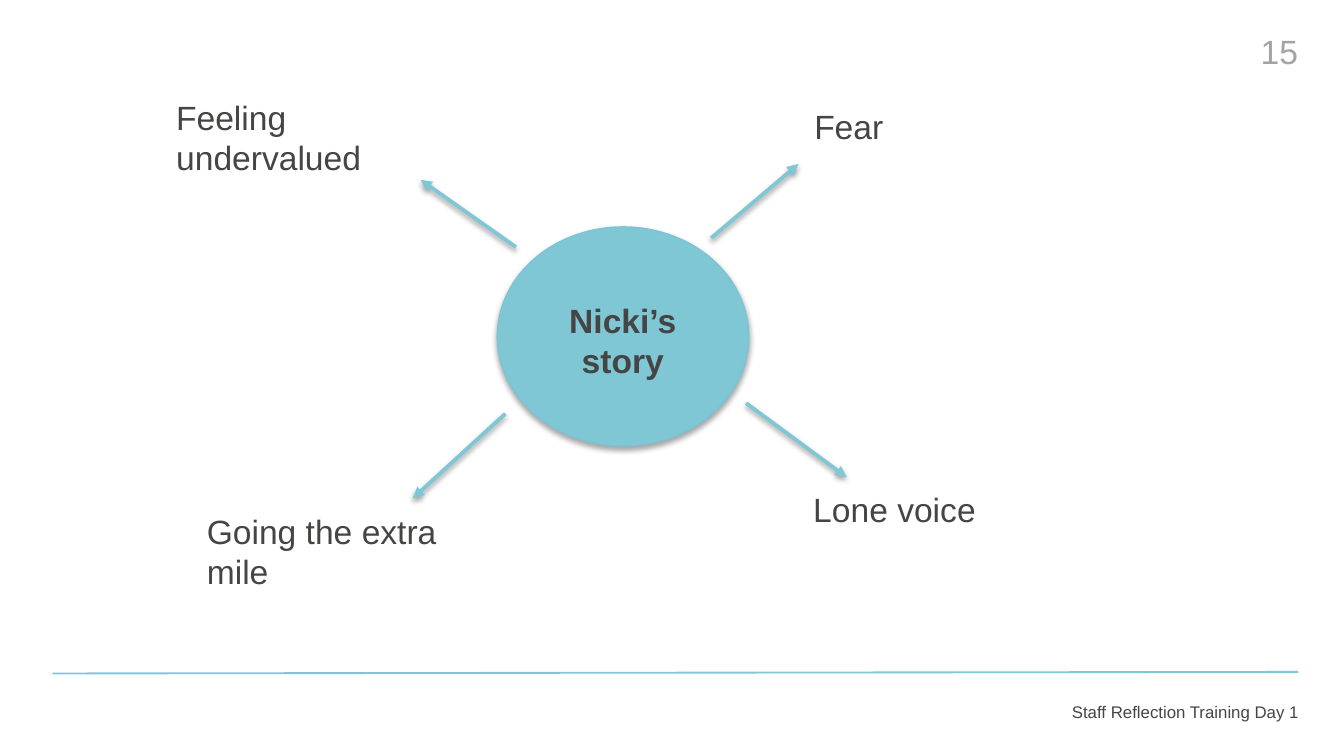
from lxml import etree
from pptx import Presentation
from pptx import util as u
from pptx.dml.color import RGBColor
from pptx.enum import shapes, text
from pptx.oxml import ns

COLOURS = {"teal": "80C7D6", "edge": "7BC4D3", "ink": "454544",
           "grey": "A3A3A3", "shadow": "000000"}
LEFT, CENTRE, RIGHT = text.PP_ALIGN.LEFT, text.PP_ALIGN.CENTER, text.PP_ALIGN.RIGHT


def colour(name):
    return RGBColor.from_string(COLOURS[name])


class StorySlide:
    font_name = "Arial"

    def __init__(self, slide):
        self.slide = slide

    def label(self, words, box, size=18, align=LEFT, ink="ink", bold=False,
              margins=(0, 0), space_after=0):
        """Add wrapped text; margins are (side, top and bottom) in cm."""
        frame = self.slide.shapes.add_textbox(*map(u.Cm, box)).text_frame
        frame.word_wrap = True
        side, end = map(u.Cm, margins)
        frame.margin_left = frame.margin_right = side
        frame.margin_top = frame.margin_bottom = end
        paragraph = frame.paragraphs[0]
        paragraph.text = words
        paragraph.alignment = align
        paragraph.space_after = u.Pt(space_after)
        font = paragraph.font
        font.name, font.size, font.bold = self.font_name, u.Pt(size), bold
        font.color.rgb = colour(ink)
        return frame

    def shadow(self, shape, opacity, distance):
        """Add a downward shadow, with opacity in percent and distance in points."""
        effects = shape._element.spPr.find(ns.qn("a:effectLst"))
        outer = etree.SubElement(
            effects, ns.qn("a:outerShdw"), blurRad=str(u.Pt(3.1)),
            dist=str(u.Pt(distance)), dir="5400000", rotWithShape="0")
        tint = etree.SubElement(outer, ns.qn("a:srgbClr"), val=COLOURS["shadow"])
        etree.SubElement(tint, ns.qn("a:alpha"), val=str(opacity * 1000))

    def hub(self, box):
        shape = self.slide.shapes.add_shape(
            shapes.MSO_SHAPE.FLOWCHART_CONNECTOR, *map(u.Cm, box))
        shape.fill.solid()
        shape.fill.fore_color.rgb = colour("teal")
        shape.line.color.rgb = colour("edge")
        shape.line.width = u.Pt(0.75)
        shape.shadow.inherit = False
        self.shadow(shape, 35, 1.8)

    def line(self, ends, width):
        connector = self.slide.shapes.add_connector(
            shapes.MSO_CONNECTOR.STRAIGHT, *map(u.Cm, ends))
        connector.line.color.rgb = colour("teal")
        connector.line.width = u.Pt(width)
        etree.SubElement(connector._element.spPr, ns.qn("a:effectLst"))
        return connector

    def arrow(self, ends):
        connector = self.line(ends, 2)
        outline = connector._element.spPr.find(ns.qn("a:ln"))
        etree.SubElement(outline, ns.qn("a:tailEnd"), type="triangle")
        self.shadow(connector, 38, 1.6)


def main():
    presentation = Presentation()
    presentation.slide_width, presentation.slide_height = u.Cm(25.4), u.Cm(14.29)
    story = StorySlide(presentation.slides.add_slide(presentation.slide_layouts[6]))

    story.line((0.99, 12.73, 24.54, 12.7), 1)
    story.label("Staff Reflection Training Day 1", (8.69, 13.13, 15.85, 0.69),
                size=9, align=RIGHT, margins=(0, 0.13))
    story.label("15", (23.08, 0.58, 1.45, 0.99), align=RIGHT, ink="grey")

    story.hub((9.4, 4.29, 4.75, 4.14))
    title = story.label("Nicki’s story", (9.7, 5.54, 4.14, 1.8), align=CENTRE,
                        bold=True, margins=(0.25, 0.13), space_after=4.5)
    title.auto_size = text.MSO_AUTO_SIZE.SHAPE_TO_FIT_TEXT

    themes = [
        ("Fear", (15.39, 2.01, 4.57, 1.5), (13.44, 4.5, 15.09, 3.1)),
        ("Lone voice", (15.37, 9.25, 5.54, 1.5), (14.1, 7.62, 16, 9.02)),
        ("Going the extra mile", (3.91, 9.65, 5.54, 1.98), (9.55, 7.82, 7.8, 9.42)),
        ("Feeling undervalued", (3.33, 1.83, 4.57, 1.68), (9.75, 4.67, 7.95, 3.4)),
    ]
    for words, box, ends in themes:
        story.arrow(ends)
        story.label(words, box)

    presentation.save("out.pptx")


if __name__ == "__main__":
    main()
